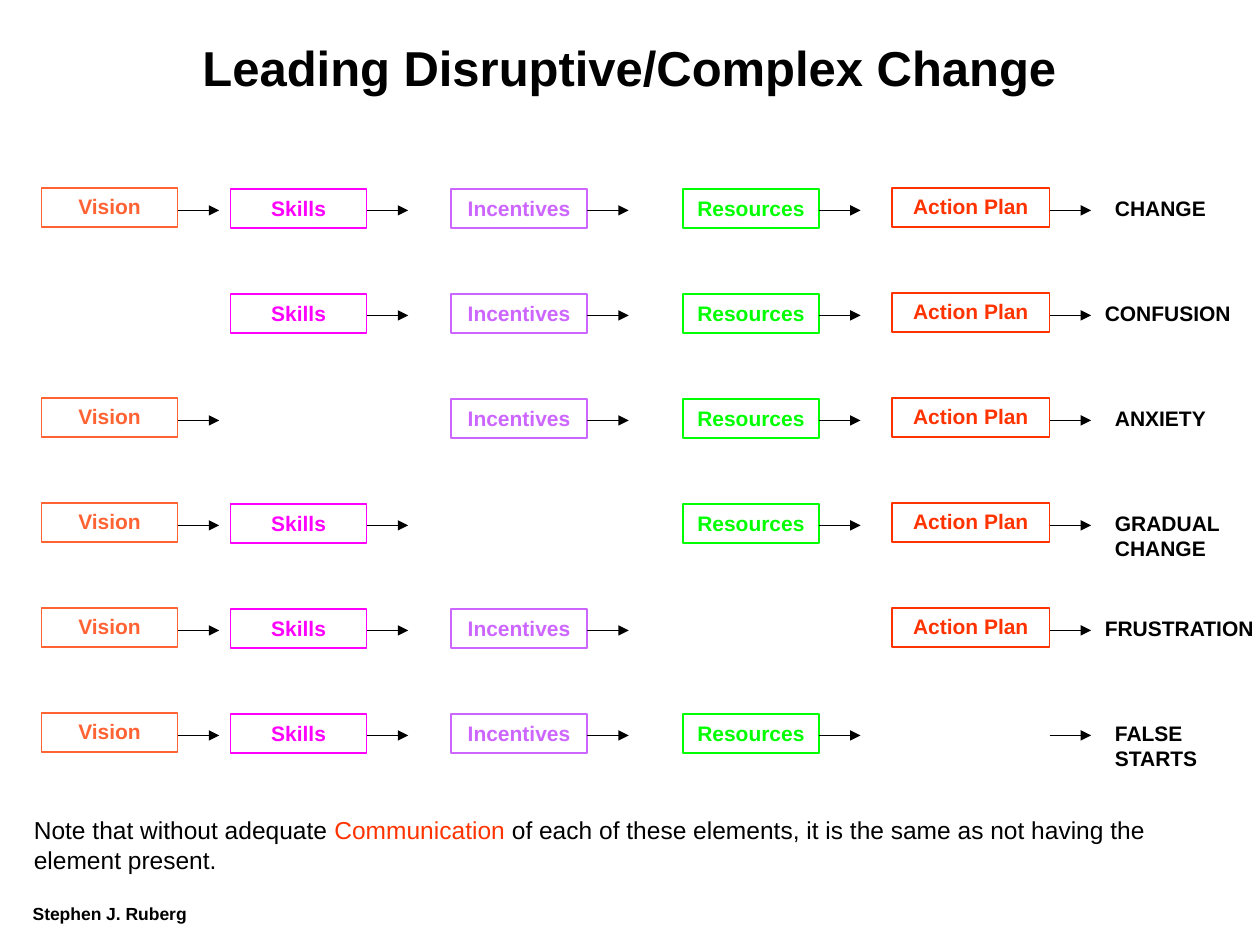
"""Build a slide on the elements that complex change needs."""
from lxml import etree
from pptx import Presentation
from pptx.dml.color import RGBColor
from pptx.enum.shapes import MSO_CONNECTOR, MSO_SHAPE
from pptx.enum.text import MSO_ANCHOR, PP_ALIGN
from pptx.oxml.ns import qn
from pptx.util import Inches, Pt

RECT = MSO_SHAPE.RECTANGLE
LINE = MSO_CONNECTOR.STRAIGHT
TOP = MSO_ANCHOR.TOP
LEFT = PP_ALIGN.LEFT
MID = PP_ALIGN.CENTER

BLACK = RGBColor(0x00, 0x00, 0x00)
CORAL = RGBColor(0xFF, 0x63, 0x33)
PINK = RGBColor(0xFF, 0x00, 0xFF)
MAUVE = RGBColor(0xCC, 0x66, 0xFF)
GREEN = RGBColor(0x00, 0xFF, 0x00)
RED = RGBColor(0xFF, 0x33, 0x00)

FONT = "Arial"
FIRST = 1.5
PITCH = 5 / 6

PARTS = [
    ("Vision", 0.33, -0.01, 1.08, CORAL),
    ("Skills", 1.83, 0, 1.08, PINK),
    ("Incentives", 3.58, 0, 1.08, MAUVE),
    ("Resources", 5.42, 0, 1.08, GREEN),
    ("Action Plan", 7.08, -0.01, 1.25, RED),
]
ROWS = [
    (None, "CHANGE", 8.75, 1.25, 0.3),
    ("Vision", "CONFUSION", 8.67, 1.33, 0.3),
    ("Skills", "ANXIETY", 8.75, 1.25, 0.3),
    ("Incentives", "GRADUAL CHANGE", 8.75, 1.25, 0.5),
    ("Resources", "FRUSTRATION", 8.67, 1.5, 0.3),
    ("Action Plan", "FALSE STARTS", 8.75, 1.25, 0.5),
]
NOTE = [
    ("Note that without adequate ", BLACK),
    ("Communication", RED),
    (" of each of these elements, it is the same as not having the "
     "element present.", BLACK),
]


def write(shape, runs, size=12, bold=True, align=LEFT):
    """Fill a shape with one paragraph of (text, color) runs."""
    frame = shape.text_frame
    frame.word_wrap = True
    frame.vertical_anchor = TOP
    para = frame.paragraphs[0]
    para.alignment = align
    for text, color in runs:
        run = para.add_run()
        run.text = text
        run.font.name = FONT
        run.font.size = Pt(size)
        run.font.bold = bold
        run.font.color.rgb = color


def add_text(slide, area, runs, **style):
    """Add a text box at (left, top, width, height)."""
    box = slide.shapes.add_textbox(*map(Inches, area))
    write(box, runs, **style)


def add_box(slide, area, text, color):
    """Add an outlined box with its name in the same color."""
    box = slide.shapes.add_shape(RECT, *map(Inches, area))
    box.shadow.inherit = False
    box.fill.background()
    box.line.color.rgb = color
    box.line.width = Pt(1)
    write(box, [(text, color)], align=MID)


def add_arrow(slide, left, top):
    """Add a short arrow that points right."""
    ends = (left, top, left + 0.33, top)
    arrow = slide.shapes.add_connector(LINE, *map(Inches, ends))
    arrow.line.color.rgb = BLACK
    arrow.line.width = Pt(0.75)
    etree.SubElement(arrow.line._get_or_add_ln(), qn("a:tailEnd"), type="triangle")
    etree.SubElement(arrow._element.spPr, qn("a:effectLst"))


def add_row(slide, top, row):
    """Add one chain of parts, without the one it lacks, and its result."""
    lack, result, left, width, height = row
    last = PARTS[-1][0]
    for name, start, shift, wide, color in PARTS:
        if name != lack:
            add_box(slide, (start, top + shift, wide, 0.31), name, color)
        if name != lack or name == last:
            add_arrow(slide, start + wide, top + 0.17)
    add_text(slide, (left, top, width, height), [(result, BLACK)])


def main():
    """Build and save the slide."""
    deck = Presentation()
    deck.slide_width = Inches(10)
    deck.slide_height = Inches(7.5)
    slide = deck.slides.add_slide(deck.slide_layouts[6])
    add_text(slide, (1.33, 0.25, 7.33, 0.57),
             [("Leading Disruptive/Complex Change", BLACK)], size=28, align=MID)
    for i, row in enumerate(ROWS):
        add_row(slide, FIRST + i * PITCH, row)
    add_text(slide, (0.17, 6.42, 9.58, 0.33), NOTE, size=14, bold=False)
    add_text(slide, (0.08, 7.12, 1.58, 0.27),
             [("Stephen J. Ruberg", BLACK)], size=10, align=MID)
    deck.save("out.pptx")


if __name__ == "__main__":
    main()
